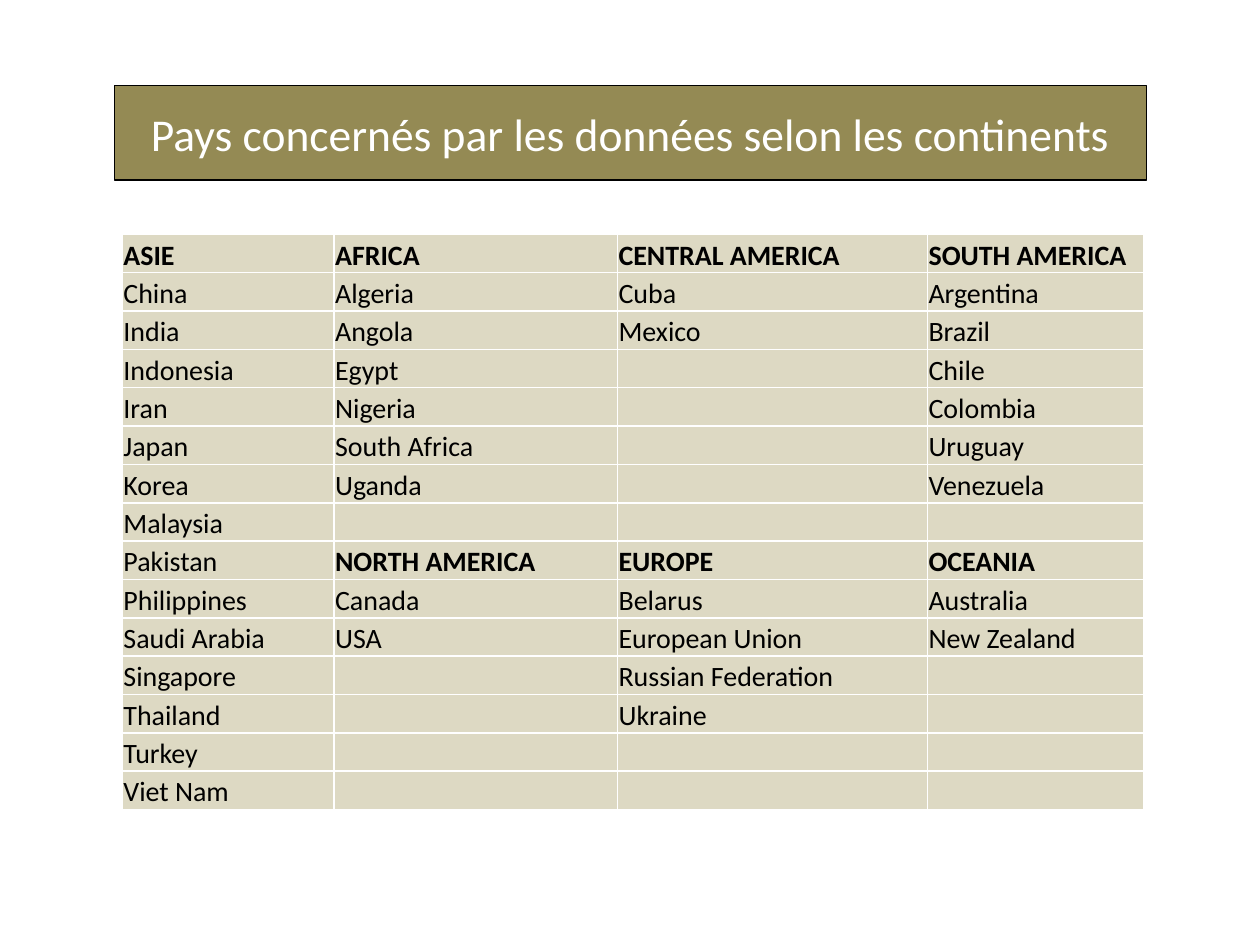
from dataclasses import dataclass

from lxml.etree import SubElement
from pptx import Presentation
from pptx.dml.color import RGBColor
from pptx.enum.text import MSO_ANCHOR, MSO_AUTO_SIZE, PP_ALIGN
from pptx.oxml.ns import qn
from pptx.util import Inches, Pt

BLACK = RGBColor(0x00, 0x00, 0x00)
WHITE = RGBColor(0xFF, 0xFF, 0xFF)
OLIVE = RGBColor(0x94, 0x8A, 0x54)
SAND = RGBColor(0xDD, 0xD9, 0xC3)
FONT = "Calibri"
CELL_SIZE = Pt(16)
ROWS = 15
ROW_HEIGHT = Inches(4.57 / ROWS)
COL_WIDTHS = (1.68, 2.25, 2.46, 1.72)


@dataclass(frozen=True)
class Region:
    name: str
    col: int
    row: int
    countries: tuple[str, ...]


REGIONS = (
    Region("ASIE", 0, 0, (
        "China", "India", "Indonesia", "Iran", "Japan", "Korea", "Malaysia",
        "Pakistan", "Philippines", "Saudi Arabia", "Singapore", "Thailand",
        "Turkey", "Viet Nam")),
    Region("AFRICA", 1, 0, (
        "Algeria", "Angola", "Egypt", "Nigeria", "South Africa", "Uganda")),
    Region("CENTRAL AMERICA", 2, 0, ("Cuba", "Mexico")),
    Region("SOUTH AMERICA", 3, 0, (
        "Argentina", "Brazil", "Chile", "Colombia", "Uruguay", "Venezuela")),
    Region("NORTH AMERICA", 1, 8, ("Canada", "USA")),
    Region("EUROPE", 2, 8, (
        "Belarus", "European Union", "Russian Federation", "Ukraine")),
    Region("OCEANIA", 3, 8, ("Australia", "New Zealand")),
)


def draw_title(sp, text: str) -> None:
    sp.left, sp.top = Inches(0.91), Inches(0.68)
    sp.width, sp.height = Inches(8.19), Inches(0.75)
    geom = SubElement(sp.element.spPr, qn("a:prstGeom"), prst="roundRect")
    SubElement(geom, qn("a:avLst"))
    sp.fill.solid()
    sp.fill.fore_color.rgb = OLIVE
    sp.line.color.rgb = BLACK
    sp.line.width = Pt(0.75)
    tf = sp.text_frame
    tf.text = text
    tf.word_wrap = True
    tf.auto_size = MSO_AUTO_SIZE.NONE
    tf.vertical_anchor = MSO_ANCHOR.MIDDLE
    p = tf.paragraphs[0]
    p.alignment = PP_ALIGN.CENTER
    p.font.name = FONT
    p.font.size = Pt(26)
    p.font.color.rgb = WHITE


def add_borders(cell, color: RGBColor, width: int) -> None:
    tc_pr = cell._tc.get_or_add_tcPr()
    for side in ("lnL", "lnR", "lnT", "lnB"):
        ln = SubElement(tc_pr, qn(f"a:{side}"), w=str(width))
        fill = SubElement(ln, qn("a:solidFill"))
        SubElement(fill, qn("a:srgbClr"), val=str(color))


def format_cell(cell) -> None:
    add_borders(cell, WHITE, Pt(1))
    cell.fill.solid()
    cell.fill.fore_color.rgb = SAND
    cell.margin_left = cell.margin_right = cell.margin_top = Inches(0.01)
    cell.margin_bottom = 0
    cell.vertical_anchor = MSO_ANCHOR.BOTTOM
    p = cell.text_frame.paragraphs[0]
    if not cell.text:
        SubElement(p._p, qn("a:endParaRPr"), sz=str(int(CELL_SIZE.pt * 100)))
    p.font.name = FONT
    p.font.size = CELL_SIZE
    p.font.color.rgb = BLACK
    p.font.bold = False


def draw_table(slide, regions: tuple[Region, ...]) -> None:
    table = slide.shapes.add_table(
        ROWS, len(COL_WIDTHS), Inches(0.97), Inches(1.86),
        Inches(sum(COL_WIDTHS)), ROW_HEIGHT * ROWS).table
    table.first_row = table.horz_banding = False
    for col, width in zip(table.columns, COL_WIDTHS):
        col.width = Inches(width)
    for row in table.rows:
        row.height = ROW_HEIGHT
    for region in regions:
        for i, text in enumerate((region.name, *region.countries)):
            table.cell(region.row + i, region.col).text = text
    for cell in table.iter_cells():
        format_cell(cell)
    for region in regions:
        heading = table.cell(region.row, region.col)
        heading.text_frame.paragraphs[0].font.bold = True


def main() -> None:
    prs = Presentation()
    prs.slide_width, prs.slide_height = Inches(10), Inches(7.5)
    slide = prs.slides.add_slide(prs.slide_layouts[5])
    draw_title(slide.shapes.title,
               "Pays concernés par les données selon les continents")
    draw_table(slide, REGIONS)
    prs.save("out.pptx")


if __name__ == "__main__":
    main()
